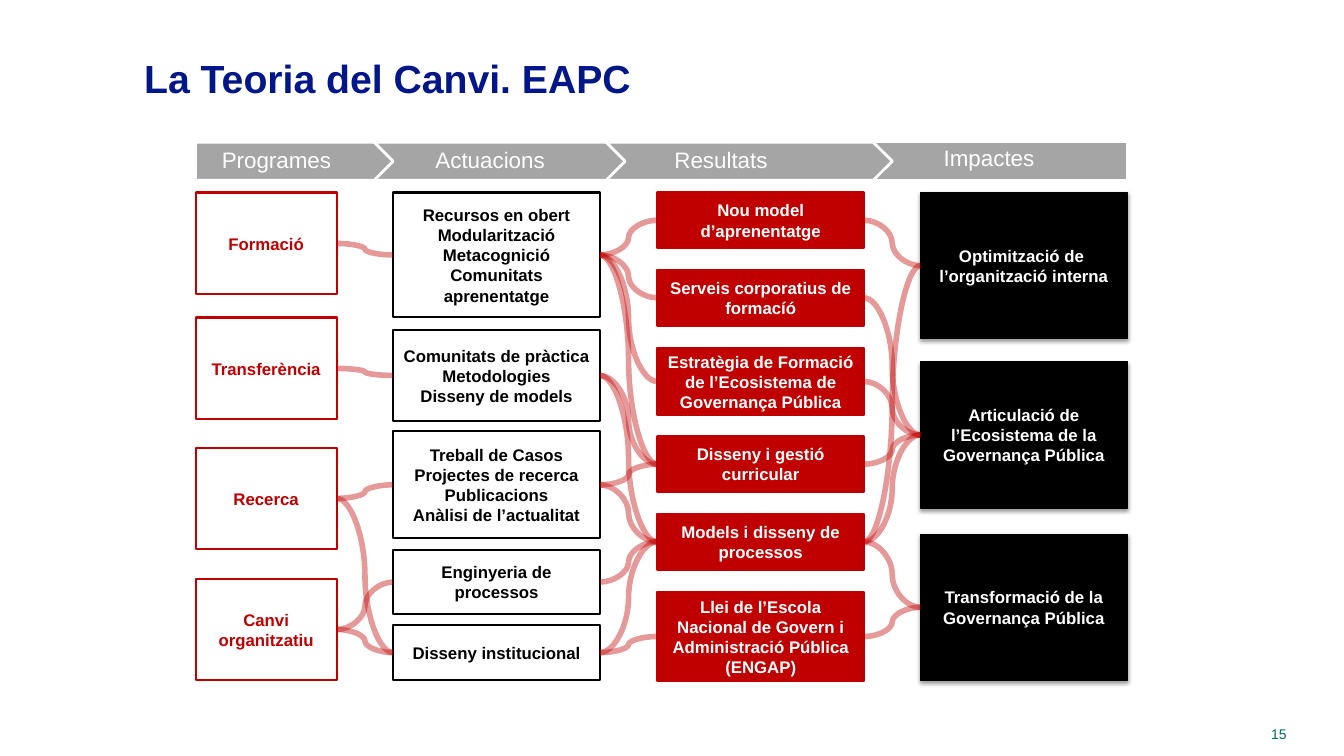
"""Build the theory of change slide: four stages of boxes joined by curved links."""
import lxml.etree
import pptx
import pptx.dml.color
import pptx.enum.shapes
import pptx.enum.text
import pptx.oxml.ns
import pptx.util
from pptx.util import Inches

NAVY = pptx.dml.color.RGBColor(0x00, 0x16, 0x89)
TEAL = pptx.dml.color.RGBColor(0x00, 0x67, 0x6C)
GREY = pptx.dml.color.RGBColor(0xA5, 0xA5, 0xA5)
RED = pptx.dml.color.RGBColor(0xC0, 0x00, 0x00)
BLACK = pptx.dml.color.RGBColor(0x00, 0x00, 0x00)
WHITE = pptx.dml.color.RGBColor(0xFF, 0xFF, 0xFF)

PRESET = pptx.enum.shapes.MSO_SHAPE
ALIGN = pptx.enum.text.PP_ALIGN
MIDDLE = pptx.enum.text.MSO_ANCHOR.MIDDLE
LEFT_SITE, RIGHT_SITE = 1, 3

HEADERS = [
    (PRESET.RECTANGLE, 8.38, 1.4, 2.8, 0.39, 0.98, 0.04, "Impactes"),
    (PRESET.PENTAGON, 1.94, 1.41, 2.37, 0.38, 0.26, 0, "Programes"),
    (PRESET.CHEVRON, 3.71, 1.41, 2.83, 0.38, 0.42, 0, "Actuacions"),
    (PRESET.CHEVRON, 6.01, 1.41, 2.84, 0.38, 0.49, 0, "Resultats"),
]

PROGRAMMES = [
    (1.91, 1.01, "Formació"),
    (3.15, 1.01, "Transferència"),
    (4.44, 1.01, "Recerca"),
    (5.74, 1.01, "Canvi organitzatiu"),
]
ACTIONS = [
    (1.91, 1.24, "Recursos en obert\nModularització\nMetacognició\nComunitats aprenentatge"),
    (3.27, 0.91, "Comunitats de pràctica\nMetodologies\nDisseny de models"),
    (4.28, 1.06, "Treball de Casos\nProjectes de recerca\nPublicacions\nAnàlisi de l’actualitat"),
    (5.46, 0.63, "Enginyeria de processos"),
    (6.2, 0.55, "Disseny institucional"),
]
RESULTS = [
    (1.91, 0.55, "Nou model d’aprenentatge"),
    (2.68, 0.55, "Serveis corporatius de formacíó"),
    (3.45, 0.67, "Estratègia de Formació de l’Ecosistema de Governança Pública"),
    (4.33, 0.55, "Disseny i gestió curricular"),
    (5.1, 0.55, "Models i disseny de processos"),
    (5.87, 0.89, "Llei de l’Escola Nacional de Govern i Administració Pública (ENGAP)"),
]
IMPACTS = [
    (1.91, 1.45, "Optimització de \vl’organització interna"),
    (3.59, 1.45, "Articulació de l’Ecosistema de la Governança Pública"),
    (5.3, 1.45, "Transformació de la Governança Pública"),
]

COLUMNS = [
    (1.94, 1.4, PROGRAMMES, {"fill": None, "line": RED, "weight": 1.5, "text": RED}),
    (3.9, 2.05, ACTIONS, {"fill": None, "line": BLACK, "weight": 1.5, "text": BLACK}),
    (6.52, 2.05, RESULTS, {"fill": RED, "line": RED, "weight": 1.5, "text": WHITE}),
    (9.13, 2.05, IMPACTS, {"fill": BLACK, "line": BLACK, "weight": 0.75, "text": WHITE}),
]

LINKS = [
    [(0, 0), (1, 1), (2, 2), (3, 4), (3, 3), (2, 4)],
    [(0, 0), (0, 1), (0, 2), (0, 3), (1, 3), (1, 4), (2, 3), (2, 4), (3, 4), (4, 4), (4, 5)],
    [(0, 0), (1, 1), (2, 1), (3, 1), (4, 0), (4, 1), (4, 2), (5, 2)],
]


def set_attributes(target, values):
    """Set every named value on the target."""
    for name, value in values.items():
        setattr(target, name, value)


def add_child(parent, tag, **attributes):
    """Append a drawing element with attributes and return it."""
    return lxml.etree.SubElement(parent, pptx.oxml.ns.qn(tag), attributes)


def write_text(shape, text, size, color, bold=False, alignment=ALIGN.LEFT, spacing=1.0):
    """Write the text into the shape and format all its paragraphs."""
    frame = shape.text_frame
    frame.text = text
    set_attributes(frame, {"word_wrap": True, "vertical_anchor": MIDDLE})
    for paragraph in frame.paragraphs:
        set_attributes(paragraph, {"alignment": alignment, "line_spacing": spacing})
        font = {"name": "Arial", "size": pptx.util.Pt(size), "bold": bold}
        set_attributes(paragraph.font, font)
        paragraph.font.color.rgb = color


def add_panel(slide, preset, bounds, fill, line, weight):
    """Add a preset shape with its fill and outline and no shadow."""
    shape = slide.shapes.add_shape(preset, *map(Inches, bounds))
    shape.shadow.inherit = False
    if fill is None:
        shape.fill.background()
    else:
        shape.fill.solid()
        shape.fill.fore_color.rgb = fill
    shape.line.color.rgb = line
    shape.line.width = pptx.util.Pt(weight)
    return shape


def add_title(slide, text):
    """Place and format the title placeholder."""
    title = slide.shapes.title
    place = {"left": 1.33, "top": 0.46, "width": 11.36, "height": 0.62}
    set_attributes(title, {name: Inches(value) for name, value in place.items()})
    write_text(title, text, 28, NAVY, bold=True)


def add_slide_number(slide, text):
    """Add the slide number in the bottom right corner."""
    box = slide.shapes.add_textbox(Inches(12.02), Inches(7.14), Inches(0.84), Inches(0.29))
    write_text(box, text, 10, TEAL, alignment=ALIGN.RIGHT)


def add_header(slide, preset, left, top, width, height, indent, bottom, label):
    """Add one stage of the header band."""
    shape = add_panel(slide, preset, (left, top, width, height), GREY, WHITE, 2)
    write_text(shape, label, 16, WHITE, spacing=0.9)
    margins = {"margin_left": indent, "margin_right": 0, "margin_top": 0, "margin_bottom": bottom}
    set_attributes(shape.text_frame, {name: Inches(value) for name, value in margins.items()})


def add_column(slide, left, width, entries, style):
    """Add the boxes of one stage and return them."""
    boxes = []
    for top, height, text in entries:
        bounds = (left, top, width, height)
        box = add_panel(slide, PRESET.RECTANGLE, bounds, style["fill"], style["line"], style["weight"])
        write_text(box, text, 12, style["text"], bold=True, alignment=ALIGN.CENTER)
        margins = {"margin_left": Inches(0.09), "margin_right": Inches(0.09)}
        set_attributes(box.text_frame, margins)
        boxes.append(box)
    return boxes


def add_shadow(shape):
    """Give the shape a soft shadow below it."""
    effects = shape.element.spPr.find(pptx.oxml.ns.qn("a:effectLst"))
    shadow = add_child(
        effects, "a:outerShdw", blurRad=str(pptx.util.Pt(3.1)), dist=str(pptx.util.Pt(1.6)),
        dir="5400000", rotWithShape="0")
    color = add_child(shadow, "a:srgbClr", val=str(BLACK))
    add_child(color, "a:alpha", val="38000")


def add_link(slide, source, target):
    """Join two boxes with a translucent curved connector."""
    kind = pptx.enum.shapes.MSO_CONNECTOR.CURVE
    connector = slide.shapes.add_connector(kind, 0, 0, 0, 0)
    connector.begin_connect(source, RIGHT_SITE)
    connector.end_connect(target, LEFT_SITE)
    connector.line.color.rgb = RED
    connector.line.width = pptx.util.Pt(4)
    properties = connector.element.spPr
    color = next(properties.iter(pptx.oxml.ns.qn("a:srgbClr")))
    add_child(color, "a:alpha", val="40000")
    add_child(properties, "a:effectLst")


def main():
    """Build the slide and save it."""
    presentation = pptx.Presentation()
    presentation.slide_width = Inches(13.33)
    presentation.slide_height = Inches(7.5)
    slide = presentation.slides.add_slide(presentation.slide_layouts.get_by_name("Title Only"))
    add_title(slide, "La Teoria del Canvi. EAPC")
    add_slide_number(slide, "15")
    for header in HEADERS:
        add_header(slide, *header)
    columns = [add_column(slide, *column) for column in COLUMNS]
    for box in columns[-1]:
        add_shadow(box)
    for sources, targets, pairs in zip(columns, columns[1:], LINKS):
        for source, target in pairs:
            add_link(slide, sources[source], targets[target])
    presentation.save("out.pptx")


if __name__ == "__main__":
    main()
